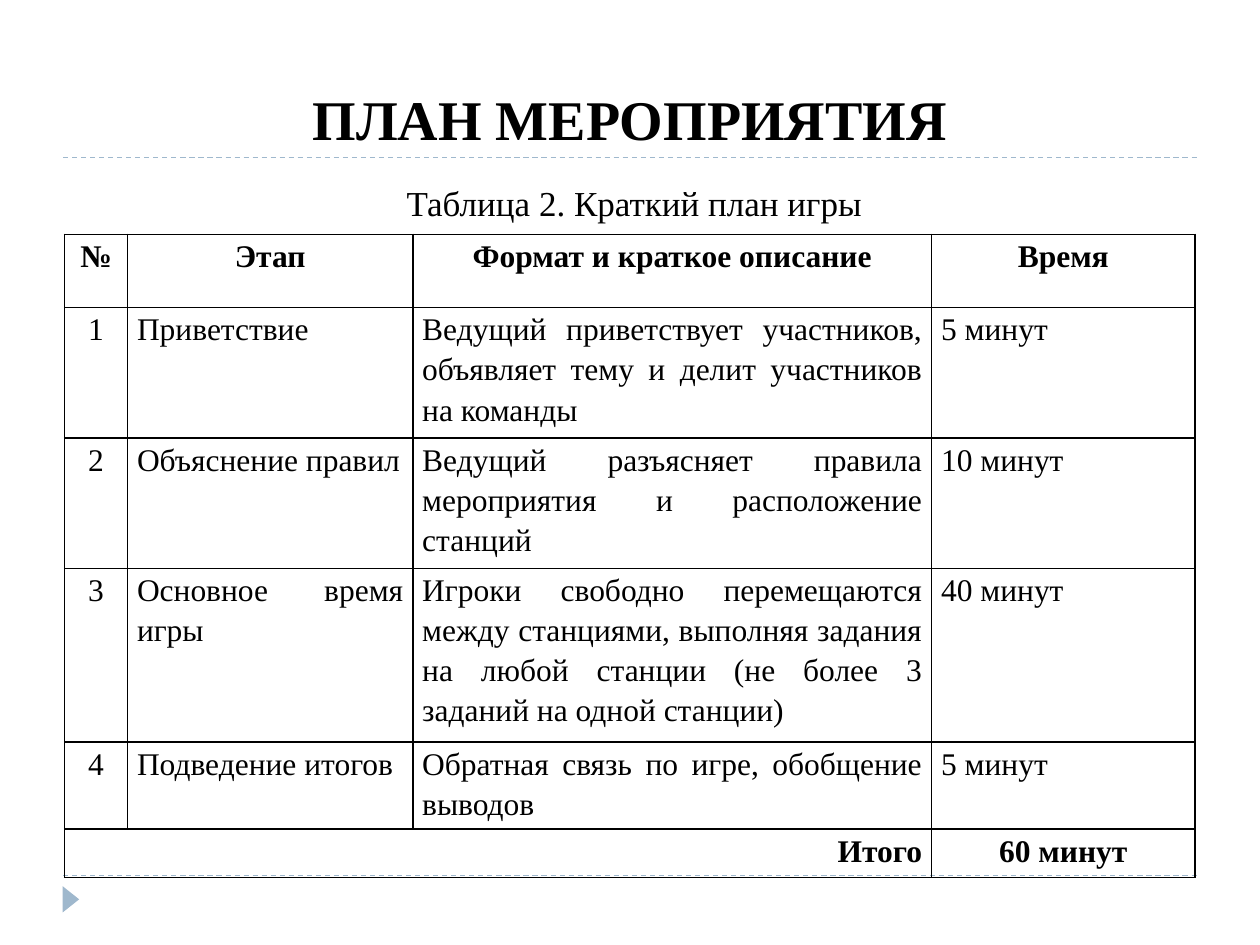
"""Builds the event plan slide with its timetable."""
import pptx
import pptx.dml.color
import pptx.enum.dml
import pptx.enum.shapes
import pptx.enum.text
import pptx.util
from lxml import etree
from pptx.oxml.ns import qn

Pt = pptx.util.Pt
ALIGN = pptx.enum.text.PP_ALIGN
ANCHOR = pptx.enum.text.MSO_ANCHOR
FONT = "Times New Roman"
BLACK, ACCENT = "000000", "9FB8CD"

TITLE = "ПЛАН МЕРОПРИЯТИЯ"
CAPTION = "Таблица 2. Краткий план игры"
HEADER = ["№", "Этап", "Формат и краткое описание", "Время"]
STAGES = [
    ["1", "Приветствие",
     "Ведущий приветствует участников, объявляет тему и делит участников на команды",
     "5 минут"],
    ["2", "Объяснение правил",
     "Ведущий разъясняет правила мероприятия и расположение станций",
     "10 минут"],
    ["3", "Основное время игры",
     "Игроки свободно перемещаются между станциями, выполняя задания на любой станции "
     "(не более 3 заданий на одной станции)",
     "40 минут"],
    ["4", "Подведение итогов",
     "Обратная связь по игре, обобщение выводов",
     "5 минут"],
]
TOTAL = ["Итого", "", "", "60 минут"]
COLUMN_WIDTHS = [36, 163, 296.5, 150.5]
ROW_HEIGHTS = [41.75, 70.75, 70.75, 95, 46.5, 27.5]
RULE_HEIGHTS = [90, 500.4]


def color(value):
    return pptx.dml.color.RGBColor.from_string(value)


def write(para, text, size, align, bold=False):
    para.text = text
    para.alignment = align
    para.font.name = FONT
    para.font.size = Pt(size)
    para.font.bold = bold
    para.font.color.rgb = color(BLACK)


def add_text(slide, place, text, size, anchor, bold=False, wrap=True):
    box = slide.shapes.add_textbox(*map(Pt, place))
    frame = box.text_frame
    frame.word_wrap = wrap
    frame.vertical_anchor = anchor
    write(frame.paragraphs[0], text, size, ALIGN.CENTER, bold)


def add_rule(slide, y):
    rule = slide.shapes.add_connector(
        pptx.enum.shapes.MSO_CONNECTOR.STRAIGHT, Pt(36), Pt(y), Pt(684), Pt(y))
    rule.line.color.rgb = color(ACCENT)
    rule.line.width = Pt(0.75)
    rule.line.dash_style = pptx.enum.dml.MSO_LINE.DASH
    etree.SubElement(rule._element.spPr, qn("a:effectLst"))


def add_borders(cell):
    properties = cell._tc.get_or_add_tcPr()
    for side in ("lnL", "lnR", "lnT", "lnB"):
        line = etree.SubElement(properties, qn(f"a:{side}"), w=str(Pt(1)))
        fill = etree.SubElement(line, qn("a:solidFill"))
        etree.SubElement(fill, qn("a:srgbClr"), val=BLACK)


def fill_cell(cell, text, align, bold):
    add_borders(cell)
    cell.fill.background()
    cell.margin_left = cell.margin_right = Pt(5.4)
    cell.margin_top = cell.margin_bottom = 0
    para = cell.text_frame.paragraphs[0]
    write(para, text, 18, align, bold)
    para.line_spacing = 1.15
    para.space_before = para.space_after = Pt(3)


def add_plan(slide):
    rows = [HEADER, *STAGES, TOTAL]
    last = len(rows) - 1
    frame = slide.shapes.add_table(
        len(rows), len(HEADER), Pt(36.9), Pt(134),
        Pt(sum(COLUMN_WIDTHS)), Pt(sum(ROW_HEIGHTS)))
    table = frame.table
    for column, width in zip(table.columns, COLUMN_WIDTHS):
        column.width = Pt(width)
    for row, height in zip(table.rows, ROW_HEIGHTS):
        row.height = Pt(height)
    for r, texts in enumerate(rows):
        bold = r in (0, last)
        for c, text in enumerate(texts):
            align = ALIGN.CENTER if bold or c == 0 else ALIGN.JUSTIFY
            if r == last and c == 0:
                align = ALIGN.RIGHT
            fill_cell(table.cell(r, c), text, align, bold)
    table.cell(last, 0).merge(table.cell(last, 2))


def add_marker(slide):
    marker = slide.shapes.add_shape(
        pptx.enum.shapes.MSO_SHAPE.ISOSCELES_TRIANGLE,
        Pt(33), Pt(509.2), Pt(15), Pt(9.4))
    marker.rotation = 90
    marker.shadow.inherit = False
    marker.fill.solid()
    marker.fill.fore_color.rgb = color(ACCENT)
    marker.line.fill.background()


def main():
    deck = pptx.Presentation()
    deck.slide_width, deck.slide_height = Pt(720), Pt(540)
    slide = deck.slides.add_slide(deck.slide_layouts[6])
    for y in RULE_HEIGHTS:
        add_rule(slide, y)
    add_marker(slide)
    add_text(slide, (36, 18, 648, 72), TITLE, 32, ANCHOR.BOTTOM, bold=True)
    add_plan(slide)
    add_text(slide, (224, 100, 277, 31.5), CAPTION, 20, ANCHOR.MIDDLE, wrap=False)
    deck.save("out.pptx")


if __name__ == "__main__":
    main()
